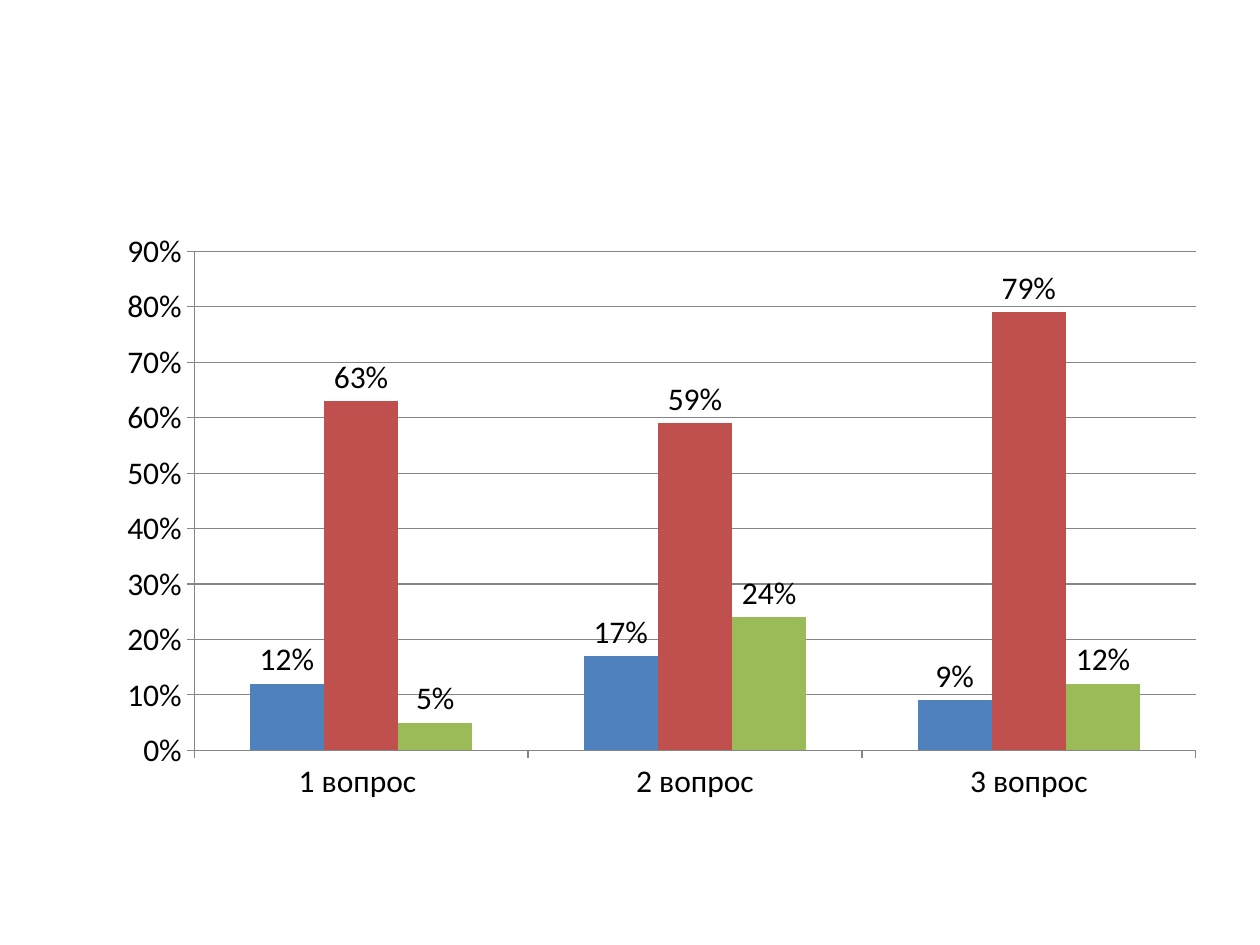
import pptx
import pptx.chart.data
import pptx.dml.color
import pptx.enum.chart
import pptx.util

Pt = pptx.util.Pt
RGBColor = pptx.dml.color.RGBColor

BLACK = RGBColor(0x00, 0x00, 0x00)
GRAY = RGBColor(0x86, 0x86, 0x86)
BLUE = RGBColor(0x4F, 0x81, 0xBD)
RED = RGBColor(0xC0, 0x50, 0x4D)
GREEN = RGBColor(0x9B, 0xBB, 0x59)

QUESTIONS = ["1 вопрос ", "2 вопрос", "3 вопрос"]
ANSWERS = [
    ("Series 1", (0.12, 0.17, 0.09), BLUE),
    ("Series 2", (0.63, 0.59, 0.79), RED),
    ("Series 3", (0.05, 0.24, 0.12), GREEN),
]


def style_line(line):
    line.color.rgb = GRAY
    line.width = Pt(0.75)


def style_axis(axis):
    axis.major_tick_mark = pptx.enum.chart.XL_TICK_MARK.OUTSIDE
    axis.minor_tick_mark = pptx.enum.chart.XL_TICK_MARK.NONE
    style_line(axis.format.line)


def style_series(series, color):
    series.format.fill.solid()
    series.format.fill.fore_color.rgb = color
    series.invert_if_negative = False
    labels = series.data_labels
    labels.show_value = True
    labels.number_format = "0%"
    labels.number_format_is_linked = False
    labels.position = pptx.enum.chart.XL_LABEL_POSITION.OUTSIDE_END


def add_answer_chart(slide):
    answer_data = pptx.chart.data.CategoryChartData(number_format="0%")
    answer_data.categories = QUESTIONS
    for name, shares, _ in ANSWERS:
        answer_data.add_series(name, shares)
    chart = slide.shapes.add_chart(
        pptx.enum.chart.XL_CHART_TYPE.COLUMN_CLUSTERED,
        Pt(60), Pt(126), Pt(636), Pt(338.4), answer_data).chart

    chart.has_title = False
    chart.has_legend = False
    chart.font.name = "Calibri"
    chart.font.size = Pt(18)
    chart.font.color.rgb = BLACK

    # Columns
    columns = chart.plots[0]
    columns.gap_width = 150
    columns.vary_by_categories = False
    for series, (_, _, color) in zip(columns.series, ANSWERS):
        style_series(series, color)

    # Axes
    style_axis(chart.category_axis)
    share_axis = chart.value_axis
    style_axis(share_axis)
    share_axis.minimum_scale = 0
    share_axis.maximum_scale = 0.9
    share_axis.major_unit = 0.1
    share_axis.has_major_gridlines = True
    style_line(share_axis.major_gridlines.format.line)
    share_axis.tick_labels.number_format = "0%"
    share_axis.tick_labels.number_format_is_linked = False


def main():
    presentation = pptx.Presentation()
    presentation.slide_width = Pt(720)
    presentation.slide_height = Pt(540)
    slide = presentation.slides.add_slide(presentation.slide_layouts[6])
    add_answer_chart(slide)
    presentation.save("out.pptx")


if __name__ == "__main__":
    main()
